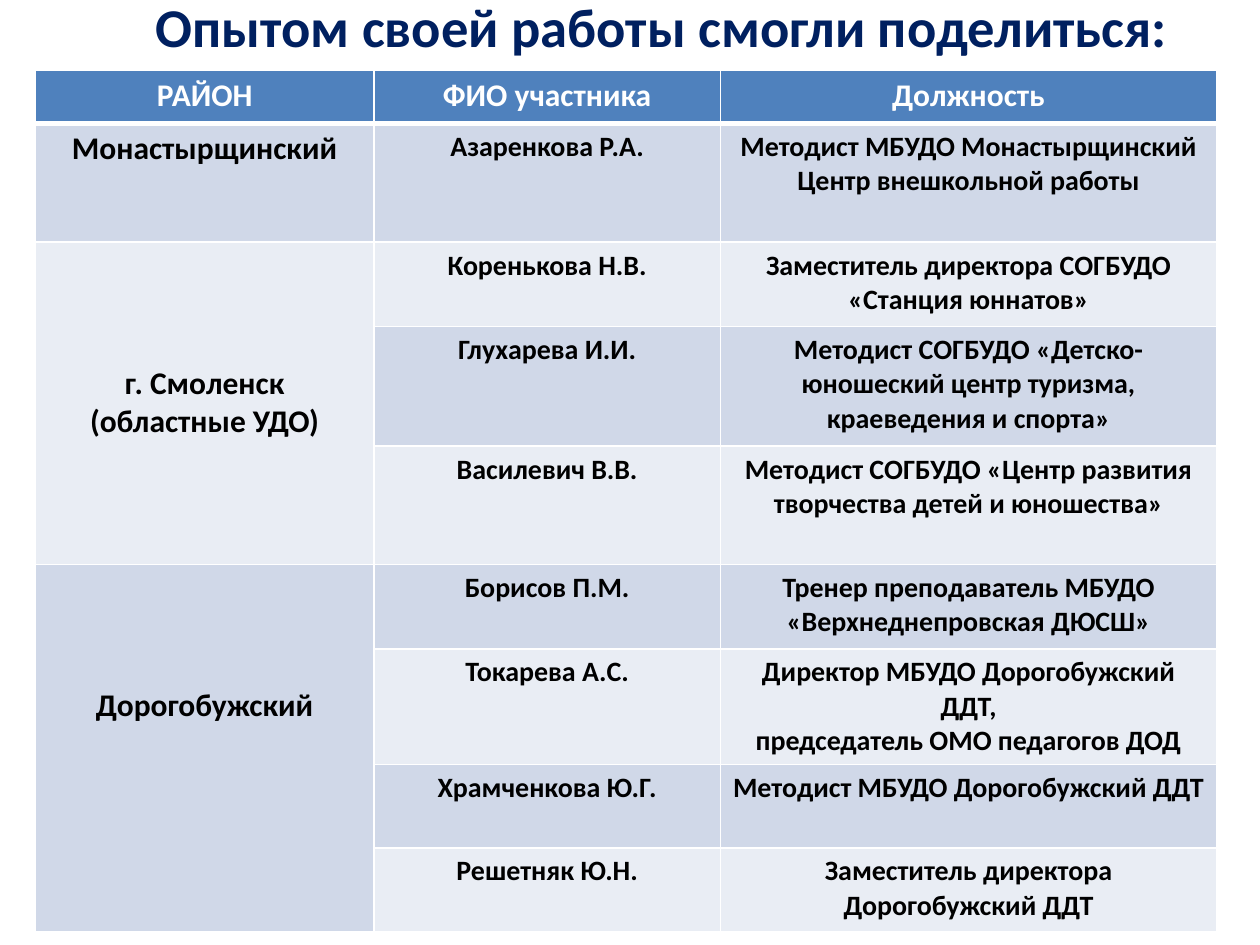
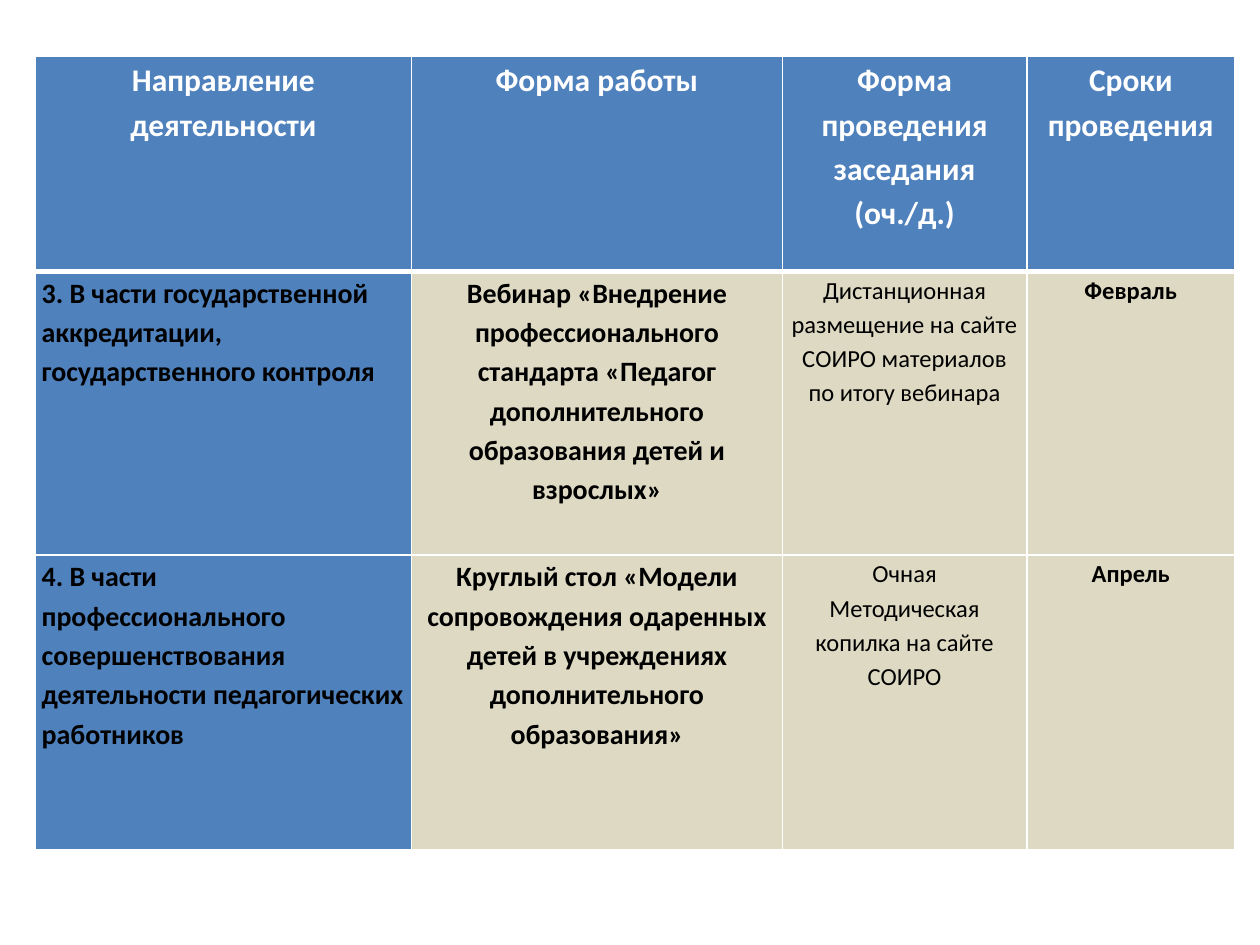
from dataclasses import dataclass

from lxml import etree
from pptx import Presentation
from pptx import util as u
from pptx.dml.color import RGBColor
from pptx.enum import text
from pptx.oxml.ns import qn

FONT = "Calibri"
WHITE, BLACK, NAVY = "FFFFFF", "000000", "002060"
BLUE, BAND_DARK, BAND_LIGHT, SAND = "4F81BD", "D0D8E8", "E9EDF4", "DDD9C3"
CENTER, LEFT = text.PP_ALIGN.CENTER, text.PP_ALIGN.LEFT


@dataclass(frozen=True)
class Style:
    size: float
    color: str = BLACK
    bold: bool = True
    align: text.PP_ALIGN = CENTER
    line_spacing: float = 1.0


@dataclass(frozen=True)
class Margins:
    side: float = 0.25
    top: float = 0.13
    bottom: float = 0.13


@dataclass(frozen=True)
class Grid:
    left: float
    top: float
    columns: list[float]
    rows: list[float]


@dataclass(frozen=True)
class Region:
    name: str
    first_row: int
    last_row: int
    margins: Margins


def rgb(value: str) -> RGBColor:
    return RGBColor.from_string(value)


def style_paragraph(para, style: Style) -> None:
    para.alignment = style.align
    para.line_spacing = style.line_spacing
    para.font.name = FONT
    para.font.size = u.Pt(style.size)
    para.font.bold = style.bold
    para.font.color.rgb = rgb(style.color)


def set_borders(cell, top: float, bottom: float) -> None:
    properties = cell._tc.get_or_add_tcPr()
    for side, width in (("L", 1), ("R", 1), ("T", top), ("B", bottom)):
        line = etree.SubElement(properties, qn(f"a:ln{side}"), w=str(u.Pt(width)))
        fill = etree.SubElement(line, qn("a:solidFill"))
        etree.SubElement(fill, qn("a:srgbClr"), val=WHITE)


def add_grid(page, grid: Grid):
    frame = page.shapes.add_table(
        len(grid.rows), len(grid.columns), u.Cm(grid.left), u.Cm(grid.top),
        u.Cm(sum(grid.columns)), u.Cm(sum(grid.rows)))
    table = frame.table
    for column, width in zip(table.columns, grid.columns):
        column.width = u.Cm(width)
    for row_index, (row, height) in enumerate(zip(table.rows, grid.rows)):
        row.height = u.Cm(height)
        for cell in row.cells:
            set_borders(cell, 3 if row_index == 1 else 1, 3 if row_index == 0 else 1)
    return table


def paint(cell, color: str) -> None:
    cell.fill.solid()
    cell.fill.fore_color.rgb = rgb(color)


def write(cell, words: str, style: Style, margins: Margins) -> None:
    cell.margin_left = cell.margin_right = u.Cm(margins.side)
    cell.margin_top, cell.margin_bottom = u.Cm(margins.top), u.Cm(margins.bottom)
    cell.text = words
    for para in cell.text_frame.paragraphs:
        style_paragraph(para, style)


def add_title(page, words: str) -> None:
    title = page.shapes.title
    title.left, title.top = u.Cm(2.54), u.Cm(-0.28)
    title.width, title.height = u.Cm(21.59), u.Cm(1.6)
    title.text = words
    title.text_frame.auto_size = text.MSO_AUTO_SIZE.NONE
    title.text_frame.vertical_anchor = text.MSO_ANCHOR.MIDDLE
    style_paragraph(title.text_frame.paragraphs[0], Style(31.2, NAVY))


SPEAKER_GRID = Grid(0.71, 1.42, [6.83, 6.98, 10.01],
                    [1.07, 2.39, 1.7, 2.41, 2.39, 1.7, 2.32, 1.68, 1.7])
SPEAKER_HEADERS = ["РАЙОН", "ФИО участника", "Должность"]
LOWERED = Margins(top=2.46)
REGIONS = [
    Region("Монастырщинский", 1, 1, Margins()),
    Region("г. Смоленск (областные УДО)", 2, 4, LOWERED),
    Region("Дорогобужский", 5, 8, LOWERED),
]
SPEAKERS = [
    ("Азаренкова Р.А.", "Методист МБУДО Монастырщинский Центр внешкольной работы"),
    ("Коренькова Н.В.", "Заместитель директора СОГБУДО «Станция юннатов»"),
    ("Глухарева И.И.",
     "Методист СОГБУДО «Детско-юношеский центр туризма, краеведения и спорта»"),
    ("Василевич В.В.", "Методист СОГБУДО «Центр развития творчества детей и юношества»"),
    ("Борисов П.М.", "Тренер преподаватель МБУДО «Верхнеднепровская ДЮСШ»"),
    ("Токарева А.С.",
     "Директор МБУДО Дорогобужский ДДТ,\nпредседатель ОМО педагогов ДОД"),
    ("Храмченкова Ю.Г.", "Методист МБУДО Дорогобужский ДДТ"),
    ("Решетняк Ю.Н.", "Заместитель директора Дорогобужский ДДТ"),
]

PLAN_GRID = Grid(0.71, 1.13, [7.59, 7.47, 4.93, 4.19], [4.34, 5.72, 5.94])
PLAN_MARGINS = Margins(0.13, 0, 0)
PLAN_HEADERS = ["Направление деятельности", "Форма работы",
                "Форма проведения заседания\n(оч./д.)", "Сроки проведения"]
PLAN_STYLES = [
    Style(16, align=LEFT, line_spacing=1.15),
    Style(16, line_spacing=1.15),
    Style(14, bold=False, line_spacing=1.15),
    Style(14, line_spacing=1.15),
]
PLAN = [
    ("3. В части государственной аккредитации, государственного контроля",
     "Вебинар «Внедрение профессионального стандарта «Педагог дополнительного "
     "образования детей и взрослых»",
     "Дистанционная размещение на сайте СОИРО материалов по итогу вебинара",
     "Февраль"),
    ("4. В части профессионального совершенствования деятельности "
     "педагогических работников",
     "Круглый стол «Модели сопровождения одаренных детей в учреждениях "
     "дополнительного образования»",
     "Очная\nМетодическая копилка на сайте СОИРО",
     "Апрель"),
]


def write_headers(table, headers: list[str], style: Style, margins: Margins) -> None:
    for cell, header in zip(table.rows[0].cells, headers):
        paint(cell, BLUE)
        write(cell, header, style, margins)


def build_speakers(page) -> None:
    add_title(page, "Опытом своей работы смогли поделиться:")
    table = add_grid(page, SPEAKER_GRID)
    write_headers(table, SPEAKER_HEADERS, Style(18, WHITE), Margins())
    for row_index, speaker in enumerate(SPEAKERS, start=1):
        for column in range(3):
            paint(table.cell(row_index, column), BAND_DARK if row_index % 2 else BAND_LIGHT)
        for column, words in enumerate(speaker, start=1):
            write(table.cell(row_index, column), words, Style(16), Margins())
    for region in REGIONS:
        cell = table.cell(region.first_row, 0)
        if region.last_row > region.first_row:
            cell.merge(table.cell(region.last_row, 0))
        write(cell, region.name, Style(18), region.margins)


def build_plan(page) -> None:
    table = add_grid(page, PLAN_GRID)
    write_headers(table, PLAN_HEADERS, Style(18, WHITE, line_spacing=1.15), PLAN_MARGINS)
    for row_index, entries in enumerate(PLAN, start=1):
        for column, (words, style) in enumerate(zip(entries, PLAN_STYLES)):
            cell = table.cell(row_index, column)
            paint(cell, SAND if column else BLUE)
            write(cell, words, style, PLAN_MARGINS)


def main() -> None:
    deck = Presentation()
    deck.slide_width, deck.slide_height = u.Cm(25.4), u.Cm(19.05)
    title_only, blank = deck.slide_layouts[5], deck.slide_layouts[6]
    build_speakers(deck.slides.add_slide(title_only))
    build_plan(deck.slides.add_slide(blank))
    deck.save("out.pptx")


if __name__ == "__main__":
    main()
